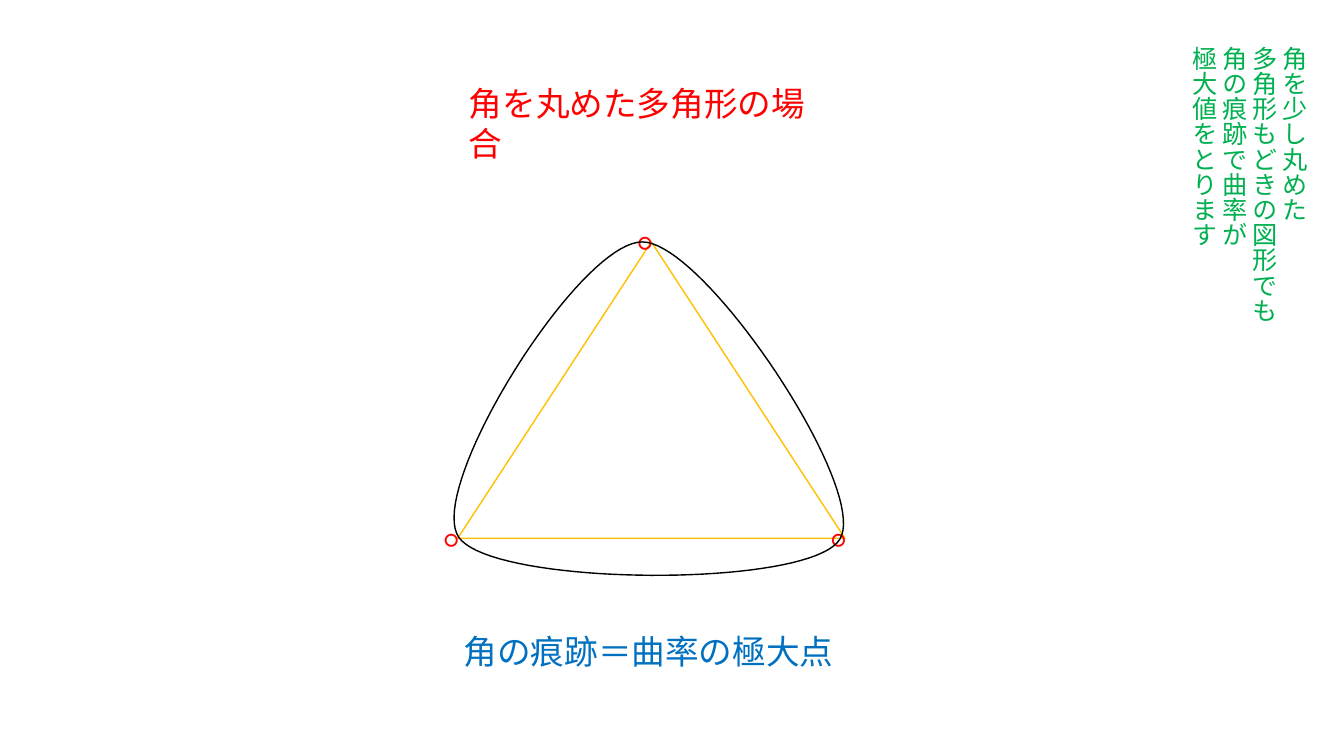
from pptx import Presentation
from pptx.dml.color import RGBColor
from pptx.enum.shapes import MSO_SHAPE
from pptx.enum.text import MSO_ANCHOR, MSO_AUTO_SIZE, PP_ALIGN
from pptx.oxml.ns import qn
from pptx.util import Inches, Pt
from lxml import etree

TRIANGLE = MSO_SHAPE.ISOSCELES_TRIANGLE
TOP, LEFT, FIXED = MSO_ANCHOR.TOP, PP_ALIGN.LEFT, MSO_AUTO_SIZE.NONE
RED = RGBColor(0xFF, 0x00, 0x00)
BLUE = RGBColor(0x00, 0x70, 0xC0)
GREEN = RGBColor(0x00, 0xB0, 0x50)
GOLD = RGBColor(0xFF, 0xC0, 0x00)
BLACK = RGBColor(0x00, 0x00, 0x00)
JAPANESE = "Noto Sans CJK JP"
STEPS = 40

prs = Presentation()
prs.slide_width, prs.slide_height = Inches(13.33), Inches(7.5)
slide = prs.slides.add_slide(prs.slide_layouts[5])


def write(text, box, color, size=24, font="Calibri", east_asian=None,
          wrap=False, vertical=False, holder=None):
    left, top, width, height = map(Inches, box)
    holder = holder or slide.shapes.add_textbox(left, top, width, height)
    holder.left, holder.top, holder.width, holder.height = left, top, width, height
    frame = holder.text_frame
    frame.text = text
    frame.word_wrap = wrap
    frame.auto_size = FIXED
    frame.vertical_anchor = TOP
    if vertical:
        frame._txBody.bodyPr.set("vert", "eaVert")
    for paragraph in frame.paragraphs:
        paragraph.alignment = LEFT
        for run in paragraph.runs:
            run.font.size = Pt(size)
            run.font.name = font
            run.font.color.rgb = color
            if east_asian:
                etree.SubElement(run.font._element, qn("a:ea"), typeface=east_asian)


def outline(shape, color):
    shape.shadow.inherit = False
    shape.fill.background()
    shape.line.color.rgb = color
    shape.line.width = Pt(1)


triangle = slide.shapes.add_shape(
    TRIANGLE, Inches(4.54), Inches(2.4), Inches(3.84), Inches(2.94))
outline(triangle, GOLD)

for corner_left, corner_top in ((8.15, 5.14), (4.31, 5.14), (6.23, 2.2)):
    write("○", (corner_left, corner_top, 0.45, 0.4), RED, size=18)

write("角を丸めた多角形の場合", (4.55, 0.77, 3.82, 0.5), RED,
      east_asian=JAPANESE, wrap=True, holder=slide.shapes.title)
write("角の痕跡＝曲率の極大点", (4.5, 6.21, 3.9, 0.5), BLUE, east_asian=JAPANESE)

apex = (6.37, 2.4)
sides = (
    ((6.99, 2.4), (8.63, 4.86), (8.33, 5.35)),
    ((8.03, 5.84), (4.89, 5.82), (4.55, 5.33)),
    ((4.22, 4.84), (5.74, 2.4), apex),
)
rounded_points = []
start = apex
for first_handle, second_handle, end in sides:
    for step in range(1, STEPS + 1):
        t = step / STEPS
        weights = ((1 - t) ** 3, 3 * t * (1 - t) ** 2, 3 * t ** 2 * (1 - t), t ** 3)
        knots = (start, first_handle, second_handle, end)
        rounded_points.append(tuple(
            Inches(sum(w * knot[axis] for w, knot in zip(weights, knots)))
            for axis in (0, 1)))
    start = end
builder = slide.shapes.build_freeform(Inches(apex[0]), Inches(apex[1]))
builder.add_line_segments(rounded_points, close=True)
outline(builder.convert_to_shape(), BLACK)

write("角を少し丸めた\n多角形もどきの図形でも\n角の痕跡で曲率が\n極大値をとります",
      (11.63, 0.36, 1.41, 2.84), GREEN, size=18, font=JAPANESE,
      east_asian=JAPANESE, vertical=True)

prs.save("out.pptx")
